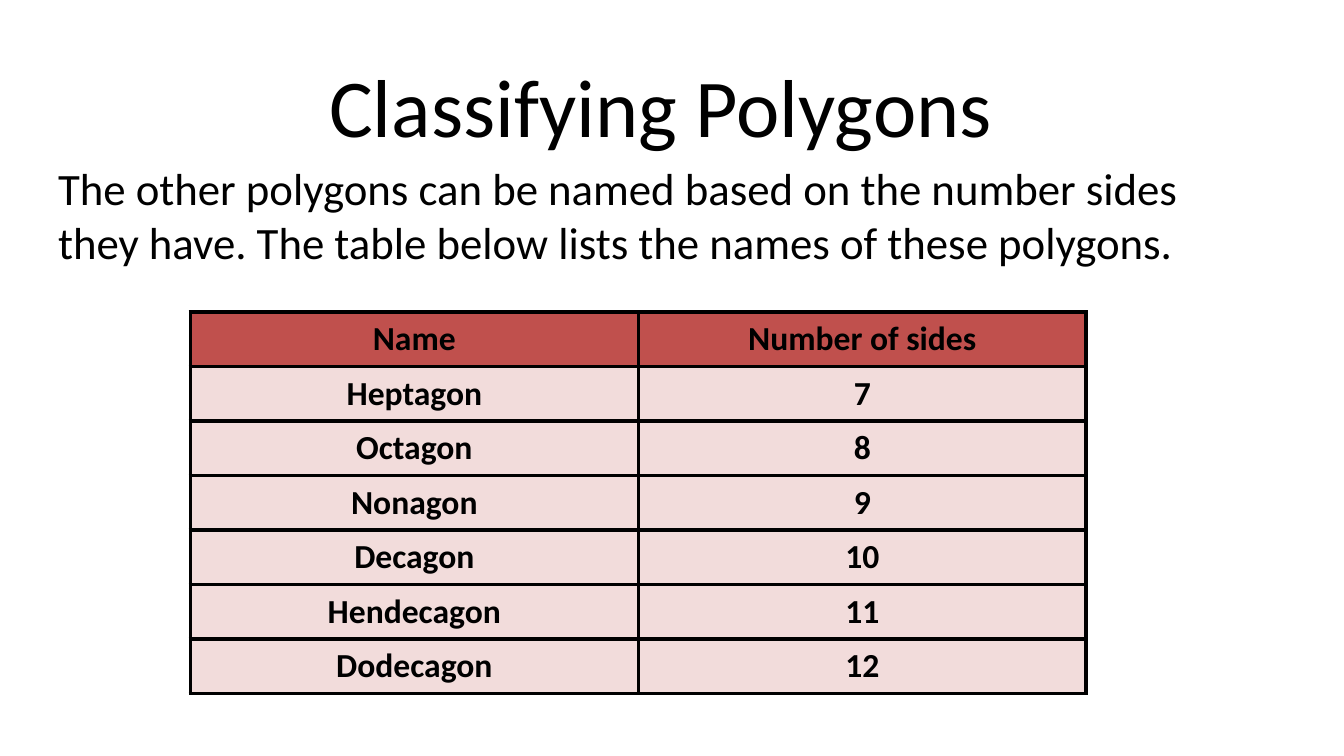
import dataclasses

import lxml.etree
import pptx
import pptx.dml.color
import pptx.enum.text
import pptx.oxml.ns
import pptx.util

Pt = pptx.util.Pt
RGB = pptx.dml.color.RGBColor
Align = pptx.enum.text.PP_ALIGN
Anchor = pptx.enum.text.MSO_ANCHOR
qn = pptx.oxml.ns.qn

COLORS = {"ink": "000000", "header": "C0504D", "row": "F2DCDB"}
FONT = "Calibri"
BORDER_WIDTH = 2.25
COLUMN_WIDTH = 240
ROW_HEIGHT = 29.2


@dataclasses.dataclass(frozen=True)
class Polygon:
    name: str
    sides: int


POLYGONS = [
    Polygon("Heptagon", 7),
    Polygon("Octagon", 8),
    Polygon("Nonagon", 9),
    Polygon("Decagon", 10),
    Polygon("Hendecagon", 11),
    Polygon("Dodecagon", 12),
]


def write(tf, text: str, size: float, bold: bool = False, align=Align.LEFT) -> None:
    p = tf.paragraphs[0]
    p.alignment = align
    r = p.add_run()
    r.text = text
    font_format = {"name": FONT, "size": Pt(size), "bold": bold}
    for key, value in font_format.items():
        setattr(r.font, key, value)
    r.font.color.rgb = RGB.from_string(COLORS["ink"])


def add_borders(cell) -> None:
    props = cell._tc.get_or_add_tcPr()
    for side in ("a:lnL", "a:lnR", "a:lnT", "a:lnB"):
        line = lxml.etree.SubElement(props, qn(side), w=str(Pt(BORDER_WIDTH)))
        fill = lxml.etree.SubElement(line, qn("a:solidFill"))
        lxml.etree.SubElement(fill, qn("a:srgbClr"), val=COLORS["ink"])


def format_cell(cell, text: str, color: str) -> None:
    add_borders(cell)
    cell.fill.solid()
    cell.fill.fore_color.rgb = RGB.from_string(COLORS[color])
    cell.vertical_anchor = Anchor.MIDDLE
    write(cell.text_frame, text, 18, bold=True, align=Align.CENTER)


def add_polygon_table(s, left: float, top: float) -> None:
    rows = [("Name", "Number of sides")] + [(g.name, str(g.sides)) for g in POLYGONS]
    table = s.shapes.add_table(
        len(rows), 2, Pt(left), Pt(top), Pt(2 * COLUMN_WIDTH), Pt(len(rows) * ROW_HEIGHT)
    ).table
    for column in table.columns:
        column.width = Pt(COLUMN_WIDTH)
    for i, row in enumerate(rows):
        table.rows[i].height = Pt(ROW_HEIGHT)
        for j, text in enumerate(row):
            format_cell(table.cell(i, j), text, "row" if i else "header")


def main() -> None:
    prs = pptx.Presentation()
    prs.slide_width, prs.slide_height = Pt(720), Pt(405)
    s = prs.slides.add_slide(prs.slide_layouts[5])

    title = s.shapes.title
    title_box = {"left": Pt(30), "top": Pt(22.5), "width": Pt(648), "height": Pt(67.5)}
    for key, value in title_box.items():
        setattr(title, key, value)
    title.text_frame.auto_size = pptx.enum.text.MSO_AUTO_SIZE.NONE
    title.text_frame.vertical_anchor = Anchor.MIDDLE
    write(title.text_frame, "Classifying Polygons", 44, align=Align.CENTER)

    intro = s.shapes.add_textbox(Pt(24), Pt(82.5), Pt(636), Pt(65.4))
    intro.text_frame.word_wrap = True
    intro.text_frame.auto_size = pptx.enum.text.MSO_AUTO_SIZE.SHAPE_TO_FIT_TEXT
    write(
        intro.text_frame,
        "The other polygons can be named based on the number sides they have. "
        "The table below lists the names of these polygons.",
        24,
    )

    add_polygon_table(s, left=102, top=167.25)
    prs.save("out.pptx")


if __name__ == "__main__":
    main()
